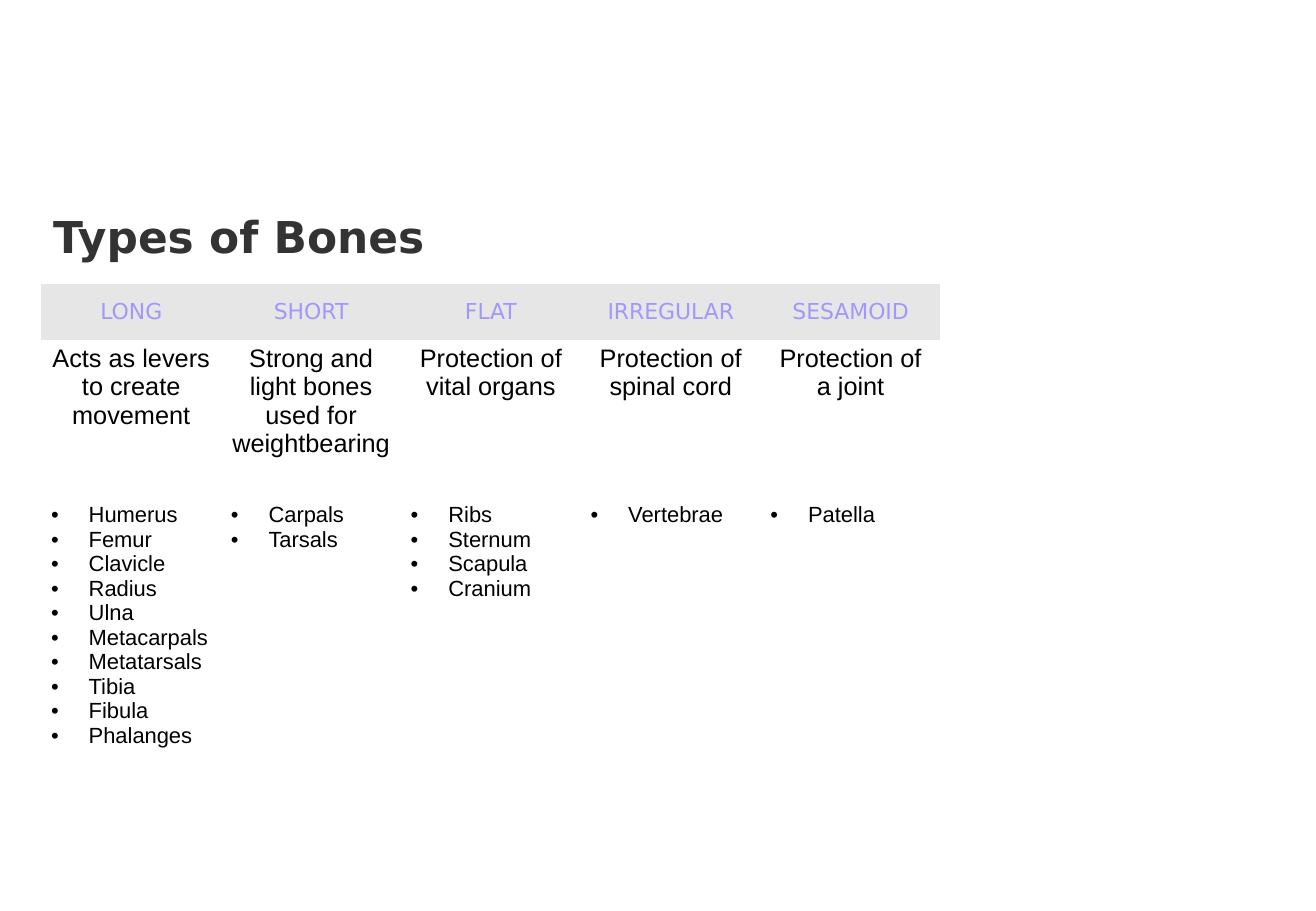
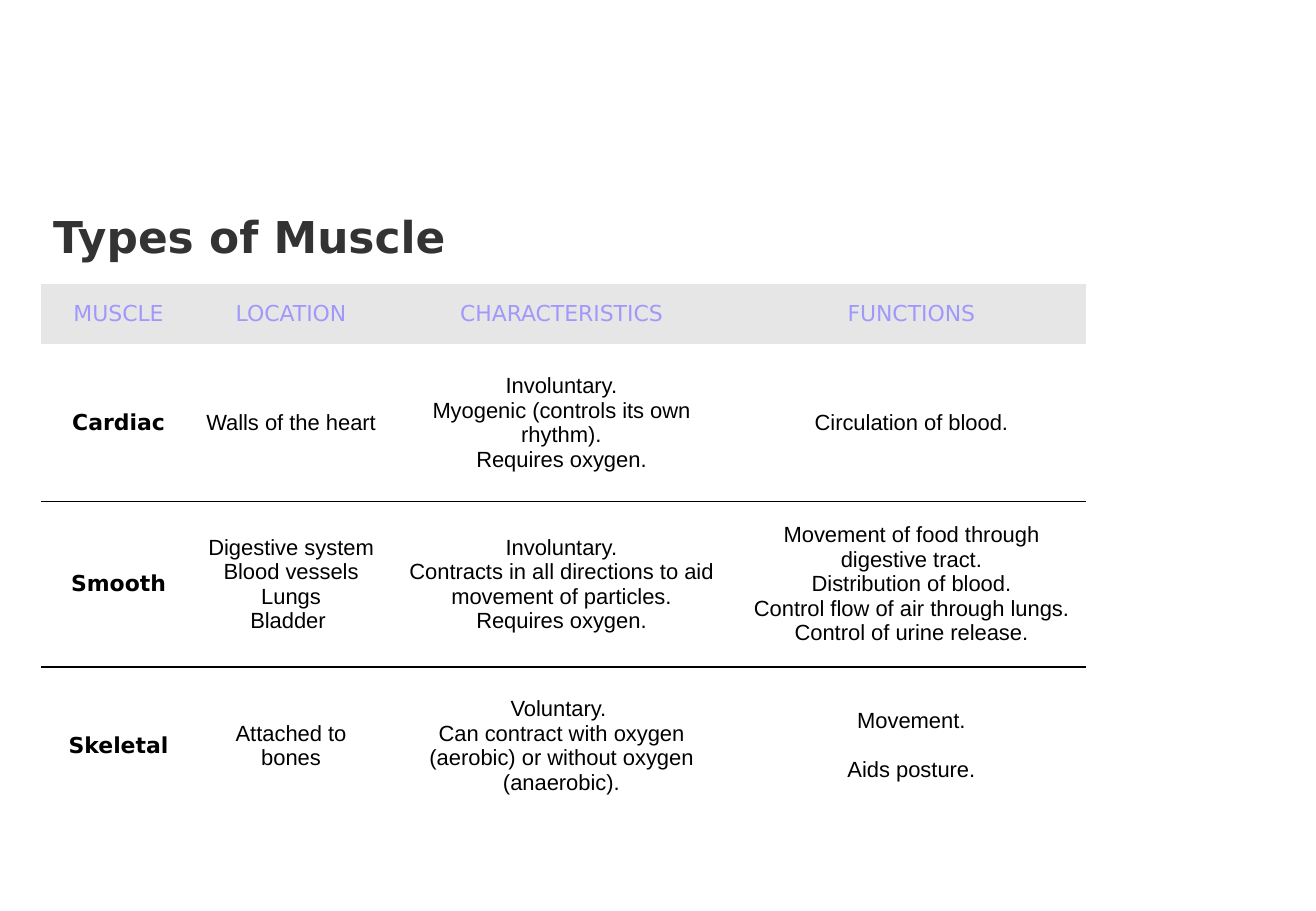
from dataclasses import dataclass

from lxml.etree import SubElement
from pptx import Presentation
from pptx.dml.color import RGBColor
from pptx.enum.text import MSO_ANCHOR as Anchor, PP_ALIGN as Align
from pptx.oxml import parse_xml
from pptx.oxml.ns import nsdecls, qn
from pptx.slide import Slide
from pptx.table import Table, _Cell as Cell
from pptx.text.text import _Paragraph as Paragraph
from pptx.util import Inches, Pt

# Shared look
HEADING_FONT = "DejaVu Sans"
BODY_FONT = "Arial"
TITLE_COLOR = RGBColor(0x33, 0x33, 0x33)
HEADER_COLOR = RGBColor(0xA0, 0x98, 0xFA)
HEADER_FILL = RGBColor(0xE7, 0xE6, 0xE6)
BLACK = RGBColor(0, 0, 0)
NO_STYLE = "{2D5ABB26-0587-4C30-8999-92F81FD0307C}"
LEFT, TITLE_TOP, TABLE_TOP = 0.34, 1.68, 2.34


@dataclass(frozen=True)
class TextStyle:
    font: str = BODY_FONT
    size: float = 13
    color: RGBColor = BLACK
    bold: bool = False
    align: Align = Align.CENTER
    anchor: Anchor = Anchor.MIDDLE
    margin_top: float = 0.04
    bullet: bool = False


TITLE = TextStyle(HEADING_FONT, 26, TITLE_COLOR, bold=True, align=Align.LEFT)
HEADER = TextStyle(HEADING_FONT, color=HEADER_COLOR)
MUSCLE_NAME = TextStyle(HEADING_FONT, bold=True)
MUSCLE_FACT = TextStyle()
BONE_ROLE = TextStyle(size=15, anchor=Anchor.TOP)
BONE_LIST = TextStyle(align=Align.LEFT, anchor=Anchor.TOP, margin_top=0.26, bullet=True)


@dataclass(frozen=True)
class Bone:
    kind: str
    role: str
    examples: str


@dataclass(frozen=True)
class Muscle:
    name: str
    location: str
    characteristics: str
    functions: str


BONES = [
    Bone("LONG", "Acts as levers to create movement",
         "Humerus\nFemur\nClavicle\nRadius\nUlna\nMetacarpals\nMetatarsals\n"
         "Tibia\nFibula\nPhalanges"),
    Bone("SHORT", "Strong and light bones used for weightbearing", "Carpals\nTarsals"),
    Bone("FLAT", "Protection of vital organs", "Ribs\nSternum\nScapula\nCranium"),
    Bone("IRREGULAR", "Protection of spinal cord", "Vertebrae"),
    Bone("SESAMOID", "Protection of a joint", "Patella"),
]

MUSCLES = [
    Muscle("Cardiac", "Walls of the heart",
           "Involuntary.\nMyogenic (controls its own rhythm).\nRequires oxygen.",
           "Circulation of blood."),
    Muscle("Smooth", "Digestive system\nBlood vessels\nLungs\nBladder ",
           "Involuntary.\nContracts in all directions to aid movement of particles.\n"
           "Requires oxygen.",
           "Movement of food through digestive tract.\nDistribution of blood.\n"
           "Control flow of air through lungs.\nControl of urine release."),
    Muscle("Skeletal", "Attached to bones",
           "Voluntary. \nCan contract with oxygen (aerobic) or without oxygen (anaerobic).",
           "Movement.\nAids posture."),
]


def format_paragraph(paragraph: Paragraph, style: TextStyle) -> None:
    paragraph.alignment = style.align
    if style.bullet:
        properties = paragraph._p.get_or_add_pPr()
        properties.set("marL", str(Inches(0.31)))
        properties.set("indent", str(-Inches(0.31)))
        SubElement(properties, qn("a:buFont")).set("typeface", BODY_FONT)
        SubElement(properties, qn("a:buChar")).set("char", "•")
    for run in paragraph.runs:
        run.font.name = style.font
        run.font.size = Pt(style.size)
        run.font.bold = style.bold
        run.font.color.rgb = style.color


def fill_cell(cell: Cell, text: str, style: TextStyle) -> None:
    cell.margin_left = cell.margin_right = Inches(0.08)
    cell.margin_top, cell.margin_bottom = Inches(style.margin_top), Inches(0.04)
    cell.vertical_anchor = style.anchor
    if style is HEADER:
        cell.fill.solid()
        cell.fill.fore_color.rgb = HEADER_FILL
    else:
        cell.fill.background()
    cell.text_frame.text = text
    for paragraph in cell.text_frame.paragraphs:
        format_paragraph(paragraph, style)


def add_border(cell: Cell, side: str) -> None:
    """Border lines come before the fill in the cell properties."""
    line = parse_xml(
        f'<a:{side} {nsdecls("a")} w="{Pt(1)}"><a:solidFill>'
        f'<a:srgbClr val="{BLACK}"/></a:solidFill></a:{side}>')
    cell._tc.get_or_add_tcPr().insert(0, line)


def add_title(slide: Slide, text: str) -> None:
    box = slide.shapes.add_textbox(Inches(LEFT), Inches(TITLE_TOP), Inches(7.23), Inches(0.54))
    box.text_frame.word_wrap = True
    box.text_frame.text = text
    format_paragraph(box.text_frame.paragraphs[0], TITLE)


def add_plain_table(slide: Slide, widths: list[float], heights: list[float]) -> Table:
    table = slide.shapes.add_table(
        len(heights), len(widths), Inches(LEFT), Inches(TABLE_TOP),
        Inches(sum(widths)), Inches(sum(heights))).table
    table.horz_banding = table.first_row = False
    table._tbl.tblPr.find(qn("a:tableStyleId")).text = NO_STYLE
    for column, width in zip(table.columns, widths):
        column.width = Inches(width)
    for row, height in zip(table.rows, heights):
        row.height = Inches(height)
    return table


def build_bones(slide: Slide) -> None:
    add_title(slide, "Types of Bones")
    table = add_plain_table(slide, [1.48] * len(BONES), [0.46, 1.06, 2.81])
    for column, bone in enumerate(BONES):
        fill_cell(table.cell(0, column), bone.kind, HEADER)
        fill_cell(table.cell(1, column), bone.role, BONE_ROLE)
        fill_cell(table.cell(2, column), bone.examples, BONE_LIST)


def build_muscles(slide: Slide) -> None:
    add_title(slide, "Types of Muscle")
    table = add_plain_table(slide, [1.27, 1.57, 2.88, 2.88], [0.49, 1.3, 1.36, 1.3])
    for column, heading in enumerate(["MUSCLE", "LOCATION", "CHARACTERISTICS", "FUNCTIONS"]):
        fill_cell(table.cell(0, column), heading, HEADER)
    for row, muscle in enumerate(MUSCLES, start=1):
        facts = [muscle.name, muscle.location, muscle.characteristics, muscle.functions]
        for column, text in enumerate(facts):
            cell = table.cell(row, column)
            fill_cell(cell, text, MUSCLE_FACT if column else MUSCLE_NAME)
            # Rules between the muscles
            if row < len(MUSCLES):
                add_border(cell, "lnB")
            if row > 1:
                add_border(cell, "lnT")
    # One line of space between the functions of skeletal muscle
    table.cell(3, 3).text_frame.paragraphs[1].space_before = Pt(14.5)


def main() -> None:
    presentation = Presentation()
    presentation.slide_width, presentation.slide_height = Inches(10.83), Inches(7.5)
    blank = presentation.slide_layouts[6]
    for build in (build_bones, build_muscles):
        build(presentation.slides.add_slide(blank))
    presentation.save("out.pptx")


if __name__ == "__main__":
    main()
